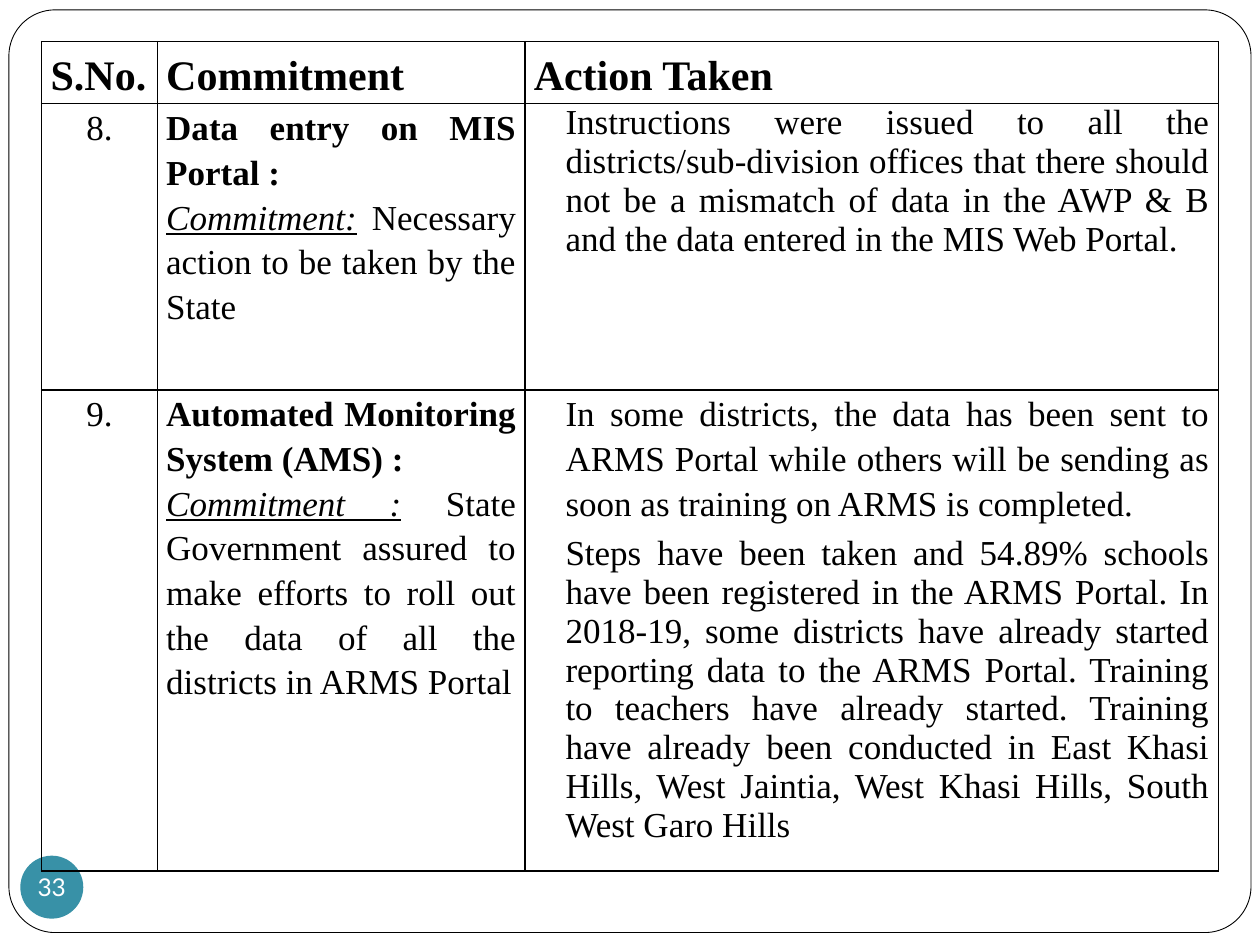
from dataclasses import dataclass

from lxml import etree
from pptx import Presentation
from pptx.dml.color import RGBColor
from pptx.enum.shapes import MSO_SHAPE
from pptx.enum.text import MSO_ANCHOR, PP_ALIGN
from pptx.oxml.ns import qn
from pptx.util import Cm, Pt

ROUND, OVAL = MSO_SHAPE.ROUNDED_RECTANGLE, MSO_SHAPE.OVAL
TOP, MIDDLE = MSO_ANCHOR.TOP, MSO_ANCHOR.MIDDLE
CENTER, JUSTIFY = PP_ALIGN.CENTER, PP_ALIGN.JUSTIFY
SERIF, SANS = "Times New Roman", "Lato"
BLACK, WHITE, TEAL = "000000", "FFFFFF", "3891A7"
SIDES = ("a:lnL", "a:lnR", "a:lnT", "a:lnB")


@dataclass
class Para:
    text: str
    lead: str = ""  # italic, underlined opening words
    bold: bool = False
    size: float = 20
    align: PP_ALIGN = JUSTIFY
    space: float = 1.15
    indent: float = 0
    before: float = 0
    after: float = 0


def paint(color, code: str):
    color.rgb = RGBColor.from_string(code)


def add_text(para, text: str, size=20.0, font=SERIF, color=BLACK,
             bold=False, italic=False, under=False):
    run = para.add_run()
    run.text = text
    face = run.font
    face.size, face.name = Pt(size), font
    face.bold, face.italic, face.underline = bold, italic, under
    paint(face.color, color)


def add_shape(slide, kind, left, top, width, height, fill: str):
    shape = slide.shapes.add_shape(kind, Cm(left), Cm(top), Cm(width), Cm(height))
    shape.shadow.inherit = False
    shape.fill.solid()
    paint(shape.fill.fore_color, fill)
    return shape


def add_borders(cell, width=1.0, color=BLACK):
    props = cell._tc.get_or_add_tcPr()
    for spot, side in enumerate(SIDES):
        line = etree.Element(qn(side), w=str(Pt(width)))
        fill = etree.SubElement(line, qn("a:solidFill"))
        etree.SubElement(fill, qn("a:srgbClr"), val=color)
        props.insert(spot, line)


def fill_cell(cell, paras: list[Para], anchor):
    cell.fill.background()
    cell.margin_left = cell.margin_right = Cm(0.18)
    cell.margin_top = cell.margin_bottom = 0
    cell.vertical_anchor = anchor
    add_borders(cell)
    frame = cell.text_frame
    for i, item in enumerate(paras):
        para = frame.add_paragraph() if i else frame.paragraphs[0]
        para.alignment, para.line_spacing = item.align, item.space
        para.space_before, para.space_after = Pt(item.before), Pt(item.after)
        if item.indent:
            props = para._p.get_or_add_pPr()
            props.set("marL", str(Cm(item.indent)))
            props.set("indent", "0")
        if item.lead:
            add_text(para, item.lead, italic=True, under=True)
            add_text(para, " ", italic=True)
        add_text(para, item.text, size=item.size, bold=item.bold)


def add_grid(slide, left, top, cols, rows, cells):
    frame = slide.shapes.add_table(len(rows), len(cols), Cm(left), Cm(top),
                                   Cm(sum(cols)), Cm(sum(rows)))
    table = frame.table
    table.first_row = table.horz_banding = False
    for col, width in zip(table.columns, cols):
        col.width = Cm(width)
    for row, height, line in zip(table.rows, rows, cells):
        row.height = Cm(height)
        anchor = MIDDLE if line is cells[0] else TOP
        for cell, paras in zip(row.cells, line):
            fill_cell(cell, paras, anchor)


HEADS = [[Para(name, bold=True, size=24)]
         for name in ("S.No.", "Commitment", "Action Taken")]
ENTRY = [
    [Para("8.", align=CENTER)],
    [Para("Data entry on MIS Portal :", bold=True),
     Para("Necessary action to be taken by the State", lead="Commitment:")],
    [Para("Instructions were issued to all the districts/sub-division offices "
          "that there should not be a mismatch of data in the AWP & B and the "
          "data entered in the MIS Web Portal.",
          space=1, indent=0.64, before=12, after=12)],
]
MONITOR = [
    [Para("9.", align=CENTER)],
    [Para("Automated Monitoring System (AMS) :", bold=True),
     Para("State Government assured to make efforts to roll out the data of "
          "all the districts in ARMS Portal", lead="Commitment :")],
    [Para("In some districts, the data has been sent to ARMS Portal while "
          "others will be sending as soon as training on ARMS is completed.",
          indent=0.64, after=6),
     Para("Steps have been taken and 54.89% schools have been registered in "
          "the ARMS Portal. In 2018-19, some districts have already started "
          "reporting data to the ARMS Portal. Training to teachers have "
          "already started. Training have already been conducted in East "
          "Khasi Hills, West Jaintia, West Khasi Hills, South West Garo Hills",
          space=1, indent=0.64)],
]


def main():
    deck = Presentation()
    deck.slide_width, deck.slide_height = Cm(25.4), Cm(19.05)
    slide = deck.slides.add_slide(deck.slide_layouts[6])

    border = add_shape(slide, ROUND, 0.18, 0.2, 25.04, 18.6, WHITE)
    border.adjustments[0] = 0.05
    paint(border.line.color, BLACK)
    border.line.width = Pt(0.5)

    badge = add_shape(slide, OVAL, 0.41, 17.25, 1.27, 1.27, TEAL)
    badge.line.fill.background()
    frame = badge.text_frame
    frame.margin_left = frame.margin_right = 0
    frame.margin_top = frame.margin_bottom = 0
    frame.vertical_anchor, frame.word_wrap = MIDDLE, False
    number = frame.paragraphs[0]
    number.alignment = CENTER
    add_text(number, "33", size=14, font=SANS, color=WHITE)

    add_grid(slide, 0.84, 0.84, (2.33, 7.41, 13.98), (1.25, 5.77, 9.7),
             (HEADS, ENTRY, MONITOR))
    deck.save("out.pptx")


if __name__ == "__main__":
    main()
